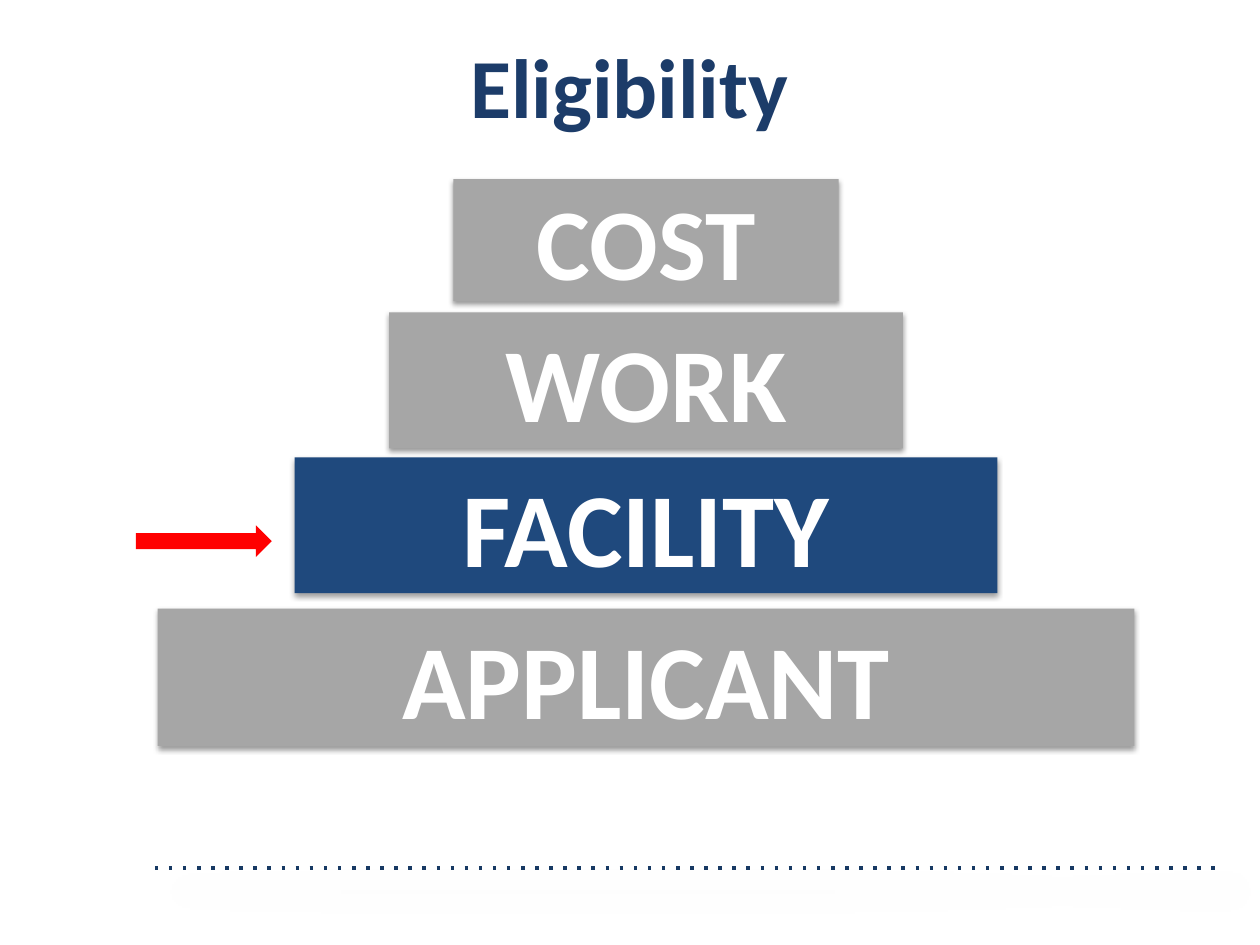
from lxml import etree
from pptx import Presentation
from pptx.dml.color import RGBColor
from pptx.enum.shapes import MSO_CONNECTOR, MSO_SHAPE
from pptx.enum.text import MSO_ANCHOR, PP_ALIGN
from pptx.oxml.ns import qn
from pptx.util import Cm, Pt

STRAIGHT = MSO_CONNECTOR.STRAIGHT
RECTANGLE = MSO_SHAPE.RECTANGLE
RIGHT_ARROW = MSO_SHAPE.RIGHT_ARROW
MIDDLE = MSO_ANCHOR.MIDDLE
CENTER = PP_ALIGN.CENTER

NAVY = RGBColor(0x1C, 0x3C, 0x69)
RULE_NAVY = RGBColor(0x17, 0x39, 0x63)
BLUE = RGBColor(0x1F, 0x49, 0x7D)
GREY = RGBColor(0xA6, 0xA6, 0xA6)
RED = RGBColor(0xFF, 0x00, 0x00)
WHITE = RGBColor(0xFF, 0xFF, 0xFF)
FONT = "Calibri"

# Label, top within the pyramid, width, height (cm), font size, fill
TIERS = [
    ("APPLICANT", 8.66, 19.69, 2.77, 60, GREY),
    ("FACILITY", 5.61, 14.17, 2.74, 60, BLUE),
    ("WORK", 2.69, 10.36, 2.74, 60, GREY),
    ("COST", 0, 7.77, 2.46, 58, GREY),
]


def format_text(shape, text, size, color):
    frame = shape.text_frame
    frame.vertical_anchor = MIDDLE
    paragraph = frame.paragraphs[0]
    paragraph.text = text
    paragraph.alignment = CENTER
    font = paragraph.font
    font.name, font.size, font.bold = FONT, Pt(size), True
    font.color.rgb = color


def add_shadow(shape, opacity, blur, distance, angle):
    """Give the shape a black outer shadow; opacity in percent, angle in degrees."""
    properties = shape._element.spPr
    effects = properties.find(qn("a:effectLst"))
    if effects is None:
        effects = etree.SubElement(properties, qn("a:effectLst"))
    shadow = etree.SubElement(
        effects, qn("a:outerShdw"), blurRad=str(Pt(blur)), dist=str(Pt(distance)),
        dir=str(angle * 60000), algn="ctr", rotWithShape="0")
    color = etree.SubElement(shadow, qn("a:srgbClr"), val="000000")
    etree.SubElement(color, qn("a:alpha"), val=str(opacity * 1000))


def add_plain_shape(shapes, kind, left, top, width, height, fill):
    shape = shapes.add_shape(kind, left, top, width, height)
    shape.shadow.inherit = False
    shape.fill.solid()
    shape.fill.fore_color.rgb = fill
    shape.line.fill.background()
    return shape


def add_footer_rule(slide, left, top, width):
    rule = slide.shapes.add_connector(STRAIGHT, left, top, left + width, top)
    rule.line.color.rgb = RULE_NAVY
    rule.line.width = Pt(2)
    outline = rule._element.spPr.find(qn("a:ln"))
    etree.SubElement(outline, qn("a:prstDash"), val="dot")
    add_shadow(rule, 26, 15, 18, 45)


def place_title(slide, left, top, width, height):
    title = slide.shapes.title
    title.left, title.top, title.width, title.height = left, top, width, height
    format_text(title, "Eligibility", 48, NAVY)


def add_pyramid(slide, left, top, width):
    """Stack the tiers, each centred across the given width."""
    group = slide.shapes.add_group_shape()
    for label, offset, tier_width, height, size, fill in TIERS:
        tier_left = left + (width - Cm(tier_width)) // 2
        tier = add_plain_shape(group.shapes, RECTANGLE, tier_left, top + Cm(offset),
                               Cm(tier_width), Cm(height), fill)
        add_shadow(tier, 38, 3.1, 1.6, 90)
        format_text(tier, label, size, WHITE)
        tier.text_frame.word_wrap = False


def main():
    presentation = Presentation()
    presentation.slide_width = Cm(25.4)
    presentation.slide_height = Cm(19.05)
    title_only = presentation.slide_layouts[5]
    slide = presentation.slides.add_slide(title_only)
    add_footer_rule(slide, Cm(3.12), Cm(17.5), Cm(21.49))
    place_title(slide, Cm(1.63), Cm(0.46), Cm(22.12), Cm(2.51))
    add_pyramid(slide, Cm(3.18), Cm(3.61), Cm(19.69))
    add_plain_shape(slide.shapes, RIGHT_ARROW,
                    Cm(2.74), Cm(10.59), Cm(2.74), Cm(0.64), RED)
    presentation.save("out.pptx")


if __name__ == "__main__":
    main()
